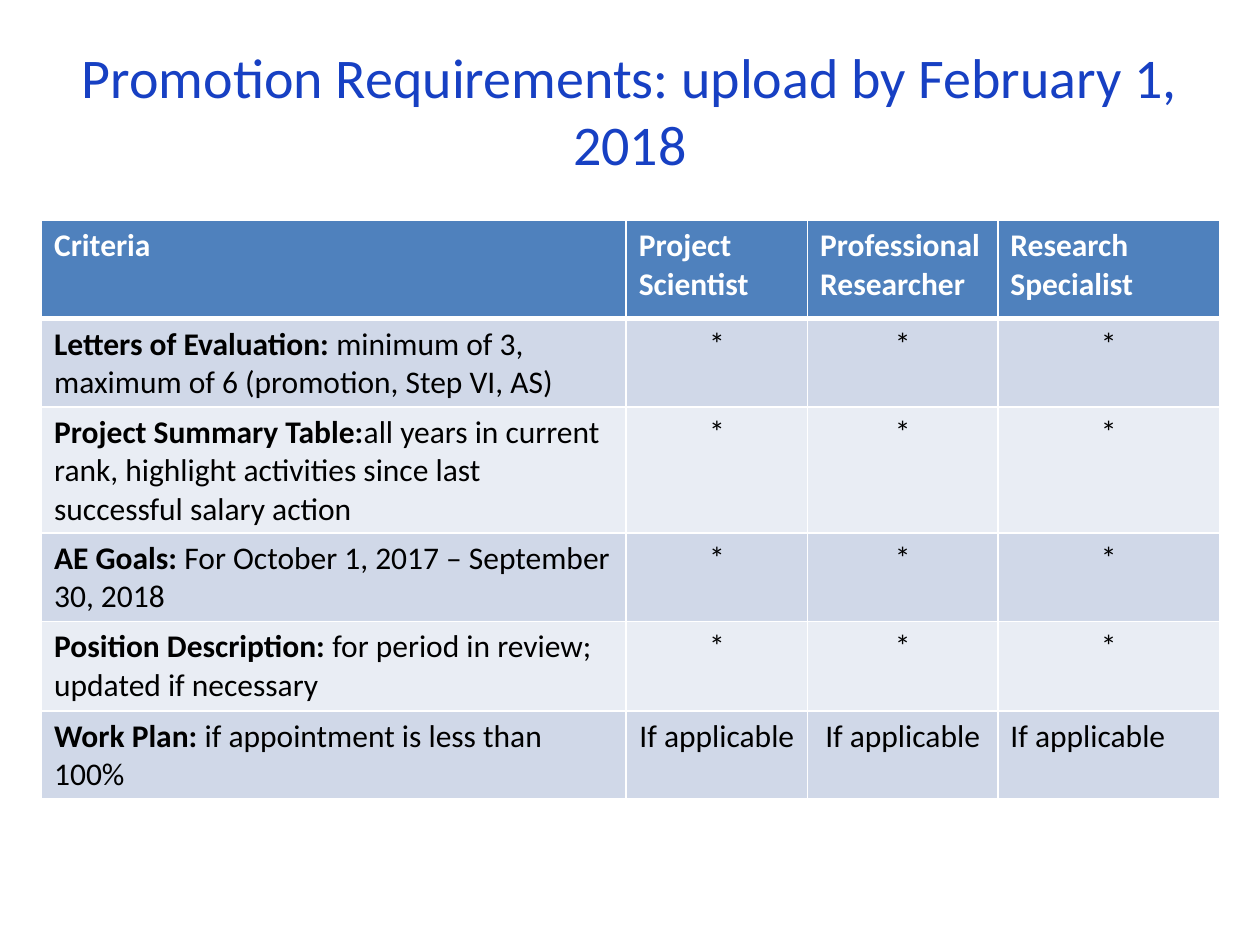
import pptx
import pptx.dml.color
import pptx.enum.text
import pptx.oxml
import pptx.oxml.ns
import pptx.util

Inches = pptx.util.Inches
ALIGN = pptx.enum.text.PP_ALIGN

# Content
TITLE = "Promotion Requirements: upload by February 1, 2018"
HEADERS = ["Criteria", "Project Scientist", "Professional Researcher", "Research Specialist"]
CRITERIA = [
    ("Letters of Evaluation: ", "minimum of 3, maximum of 6 (promotion, Step VI, AS)", "*"),
    ("Project Summary Table:",
     "all years in current rank, highlight activities since last successful salary action", "*"),
    ("AE Goals: ", "For October 1, 2017 – September 30, 2018", "*"),
    ("Position Description: ", "for period in review; updated if necessary", "*"),
    ("Work Plan: ", "if appointment is less than 100%", "If applicable"),
]
COLUMN_WIDTHS = [4.64, 1.44, 1.51, 1.76]
ROW_HEIGHTS = [0.78, 0.65, 0.65, 0.65, 0.71, 0.53]

THEME = {
    "title": {"name": "Calibri", "size": 32, "bold": False, "color": "1740C3"},
    "header": {"name": "Calibri", "size": 18, "bold": True, "color": "FFFFFF"},
    "label": {"name": "Calibri", "size": 18, "bold": True, "color": "000000"},
    "body": {"name": "Calibri", "size": 18, "bold": False, "color": "000000"},
    "header_fill": "4F81BD",
    "band_fills": ["D0D8E8", "E9EDF4"],
    "border": "FFFFFF",
}


def rgb(value):
    return pptx.dml.color.RGBColor.from_string(value)


def add_text(para, text, style):
    span = para.add_run()
    span.text = text
    for key, value in THEME[style].items():
        if key == "color":
            span.font.color.rgb = rgb(value)
        else:
            setattr(span.font, key, pptx.util.Pt(value) if key == "size" else value)


def set_borders(cell, bottom_width):
    properties = cell._tc.get_or_add_tcPr()
    widths = {"lnL": 1, "lnR": 1, "lnT": 1, "lnB": bottom_width}
    for index, (tag, width) in enumerate(widths.items()):
        line = pptx.oxml.parse_xml(
            f'<a:{tag} {pptx.oxml.ns.nsdecls("a")} w="{pptx.util.Pt(width)}">'
            f'<a:solidFill><a:srgbClr val="{THEME["border"]}"/></a:solidFill></a:{tag}>')
        properties.insert(index, line)


def fill_cell(cell, spans, fill, align=ALIGN.LEFT, bottom_width=1):
    cell.fill.solid()
    cell.fill.fore_color.rgb = rgb(fill)
    set_borders(cell, bottom_width)
    para = cell.text_frame.paragraphs[0]
    para.alignment = align
    for text, style in spans:
        add_text(para, text, style)


def add_title(page):
    box = page.shapes.add_textbox(Inches(0.5), Inches(0.45), Inches(9), Inches(0.84))
    frame = box.text_frame
    frame.word_wrap = True
    frame.vertical_anchor = pptx.enum.text.MSO_ANCHOR.MIDDLE
    frame.paragraphs[0].alignment = ALIGN.CENTER
    add_text(frame.paragraphs[0], TITLE, "title")


def add_criteria_table(page):
    table = page.shapes.add_table(
        len(ROW_HEIGHTS), len(COLUMN_WIDTHS), Inches(0.33), Inches(1.75),
        Inches(sum(COLUMN_WIDTHS)), Inches(sum(ROW_HEIGHTS))).table
    for column, width in zip(table.columns, COLUMN_WIDTHS):
        column.width = Inches(width)
    for row, height in zip(table.rows, ROW_HEIGHTS):
        row.height = Inches(height)

    # Header row, with a heavier rule below
    for index, header in enumerate(HEADERS):
        fill_cell(table.cell(0, index), [(header, "header")], THEME["header_fill"], bottom_width=3)

    # Criteria rows in alternating bands
    last_column = len(HEADERS) - 1
    for index, (label, detail, mark) in enumerate(CRITERIA):
        fill = THEME["band_fills"][index % 2]
        fill_cell(table.cell(index + 1, 0), [(label, "label"), (detail, "body")], fill)
        for column in range(1, last_column + 1):
            is_final_cell = column == last_column and index == len(CRITERIA) - 1
            align = ALIGN.LEFT if is_final_cell else ALIGN.CENTER
            fill_cell(table.cell(index + 1, column), [(mark, "body")], fill, align)


def main():
    deck = pptx.Presentation()
    deck.slide_width, deck.slide_height = Inches(10), Inches(7.5)
    page = deck.slides.add_slide(deck.slide_layouts[6])
    add_title(page)
    add_criteria_table(page)
    deck.save("out.pptx")


if __name__ == "__main__":
    main()
